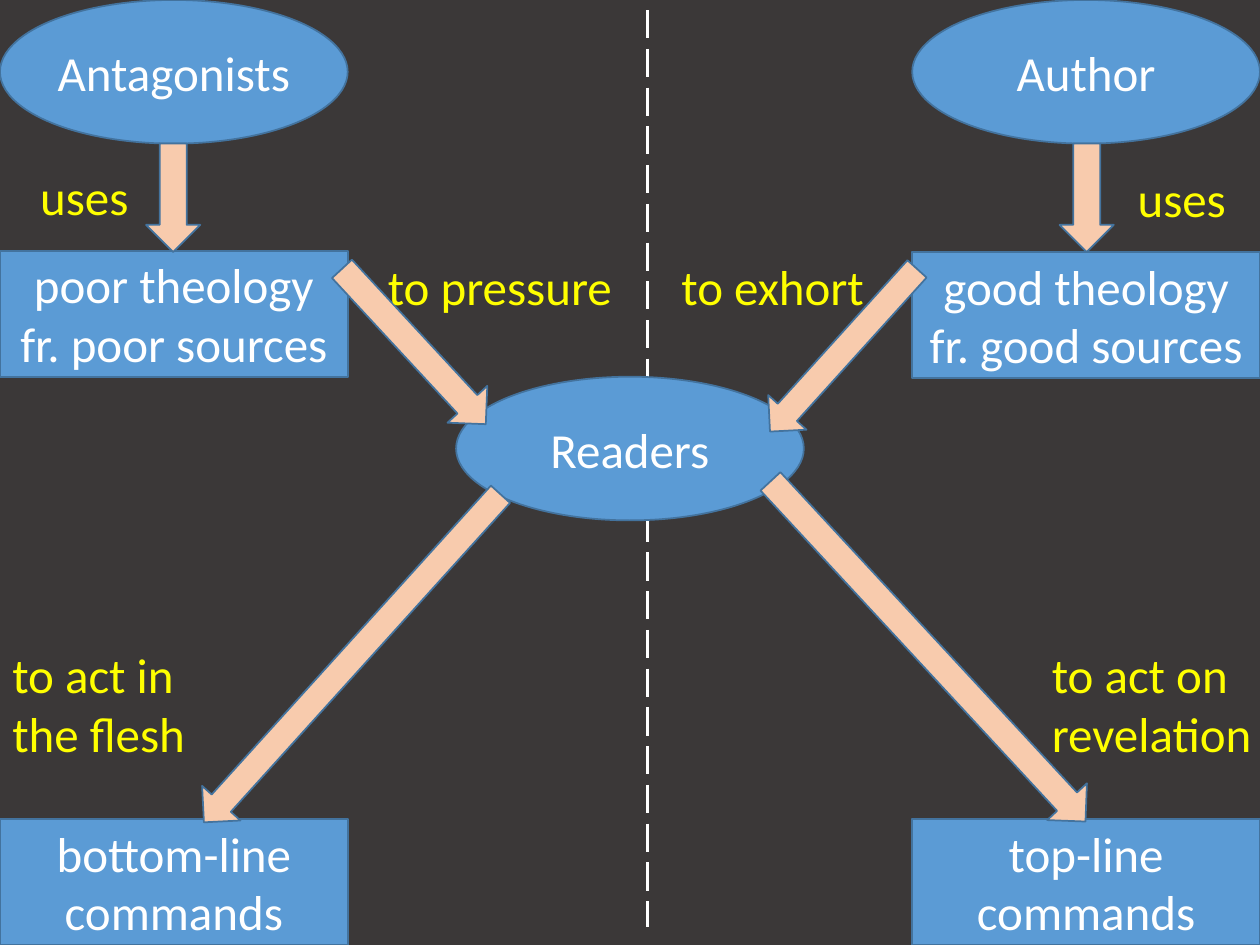
from lxml import etree
from pptx import Presentation
from pptx.dml.color import RGBColor
from pptx.enum.dml import MSO_LINE
from pptx.enum.shapes import MSO_CONNECTOR, MSO_SHAPE
from pptx.enum.text import MSO_ANCHOR, MSO_AUTO_SIZE, PP_ALIGN
from pptx.oxml.ns import qn
from pptx.util import Inches, Pt

OVAL, RECT, ARROW = MSO_SHAPE.OVAL, MSO_SHAPE.RECTANGLE, MSO_SHAPE.DOWN_ARROW
STRAIGHT, LONG_DASH = MSO_CONNECTOR.STRAIGHT, MSO_LINE.LONG_DASH
LEFT, CENTER = PP_ALIGN.LEFT, PP_ALIGN.CENTER
TOP, MIDDLE = MSO_ANCHOR.TOP, MSO_ANCHOR.MIDDLE
FIT_SHAPE = MSO_AUTO_SIZE.SHAPE_TO_FIT_TEXT

COLORS = {
    "background": "3B3838",
    "node": "5B9BD5",
    "outline": "43739E",
    "arrow": "F8CBAD",
    "node_text": "FFFFFF",
    "label": "FFFF00",
    "divider": "FFFFFF",
}
SLIDE_W, SLIDE_H = 10, 7.5
NODE_W, OVAL_H, BOX_H = 2.76, 1.14, 1
RIGHT_X = SLIDE_W - NODE_W
READERS_X = (SLIDE_W - NODE_W) / 2
COMMANDS_Y = SLIDE_H - BOX_H
TILT = 42.1


def color(role):
    return RGBColor.from_string(COLORS[role])


def write(frame, text, role="node_text", size=28, font="Calibri", align=CENTER, anchor=MIDDLE):
    frame.word_wrap = True
    frame.vertical_anchor = anchor
    frame.text = text
    for paragraph in frame.paragraphs:
        paragraph.alignment = align
        paragraph.font.size = Pt(size)
        paragraph.font.name = font
        paragraph.font.color.rgb = color(role)


class Diagram:
    """Holds the style and the slide on which the argument diagram is drawn."""

    def __init__(self, slide):
        self.slide = slide
        slide.background.fill.solid()
        slide.background.fill.fore_color.rgb = color("background")

    def shape(self, kind, x, y, w, h, role):
        shape = self.slide.shapes.add_shape(kind, Inches(x), Inches(y), Inches(w), Inches(h))
        shape.shadow.inherit = False
        shape.fill.solid()
        shape.fill.fore_color.rgb = color(role)
        shape.line.color.rgb = color("outline")
        shape.line.width = Pt(1)
        return shape

    def actor(self, text, x, y):
        frame = self.shape(OVAL, x, y, NODE_W, OVAL_H, "node").text_frame
        frame.margin_left = frame.margin_right = frame.margin_top = frame.margin_bottom = 0
        write(frame, text)

    def box(self, text, x, y):
        write(self.shape(RECT, x, y, NODE_W, BOX_H, "node").text_frame, text)

    def arrow(self, x, y, w, h, rotation=0):
        self.shape(ARROW, x, y, w, h, "arrow").rotation = rotation

    def label(self, text, x, y, w, h=0.57):
        label = self.slide.shapes.add_textbox(Inches(x), Inches(y), Inches(w), Inches(h))
        write(label.text_frame, text, role="label", align=LEFT, anchor=TOP)
        label.text_frame.auto_size = FIT_SHAPE

    def divider(self, x, top, bottom):
        divider = self.slide.shapes.add_connector(
            STRAIGHT, Inches(x), Inches(top), Inches(x), Inches(bottom))
        divider.line.color.rgb = color("divider")
        divider.line.width = Pt(2)
        divider.line.dash_style = LONG_DASH
        etree.SubElement(divider._element.spPr, qn("a:effectLst"))


def main():
    deck = Presentation()
    deck.slide_width, deck.slide_height = Inches(SLIDE_W), Inches(SLIDE_H)
    diagram = Diagram(deck.slides.add_slide(deck.slide_layouts[6]))

    diagram.divider(5.14, 0.08, 7.36)

    for name, x, y in [
        ("Antagonists", 0, 0),
        ("Author", RIGHT_X, 0),
        ("Readers", READERS_X, 2.99),
    ]:
        diagram.actor(name, x, y)

    for content, x, y in [
        ("poor theology\nfr. poor sources", 0, 1.99),
        ("good theology\nfr. good sources", RIGHT_X, 2),
        ("bottom-line commands", 0, COMMANDS_Y),
        ("top-line commands", RIGHT_X, COMMANDS_Y),
    ]:
        diagram.box(content, x, y)

    for placement in [
        (8.41, 1.14, 0.43, 0.86),
        (1.16, 1.14, 0.43, 0.86),
        (3.07, 1.91, 0.43, 1.68, 360 - TILT - 0.7),
        (6.49, 1.91, 0.41, 1.74, TILT),
        (2.59, 3.47, 0.41, 3.51, TILT),
        (7.15, 3.33, 0.43, 3.68, 360 - TILT - 0.7),
    ]:
        diagram.arrow(*placement)

    for action in [
        ("uses", 0.22, 1.27, 0.95),
        ("uses", 8.93, 1.29, 0.95),
        ("to pressure", 2.98, 1.99, 2),
        ("to exhort", 5.31, 1.99, 1.73),
        ("to act in the flesh", 0, 5.07, 2, 1.04),
        ("to act on revelation", 8.25, 5.07, 2, 1.04),
    ]:
        diagram.label(*action)

    deck.save("out.pptx")


if __name__ == "__main__":
    main()
